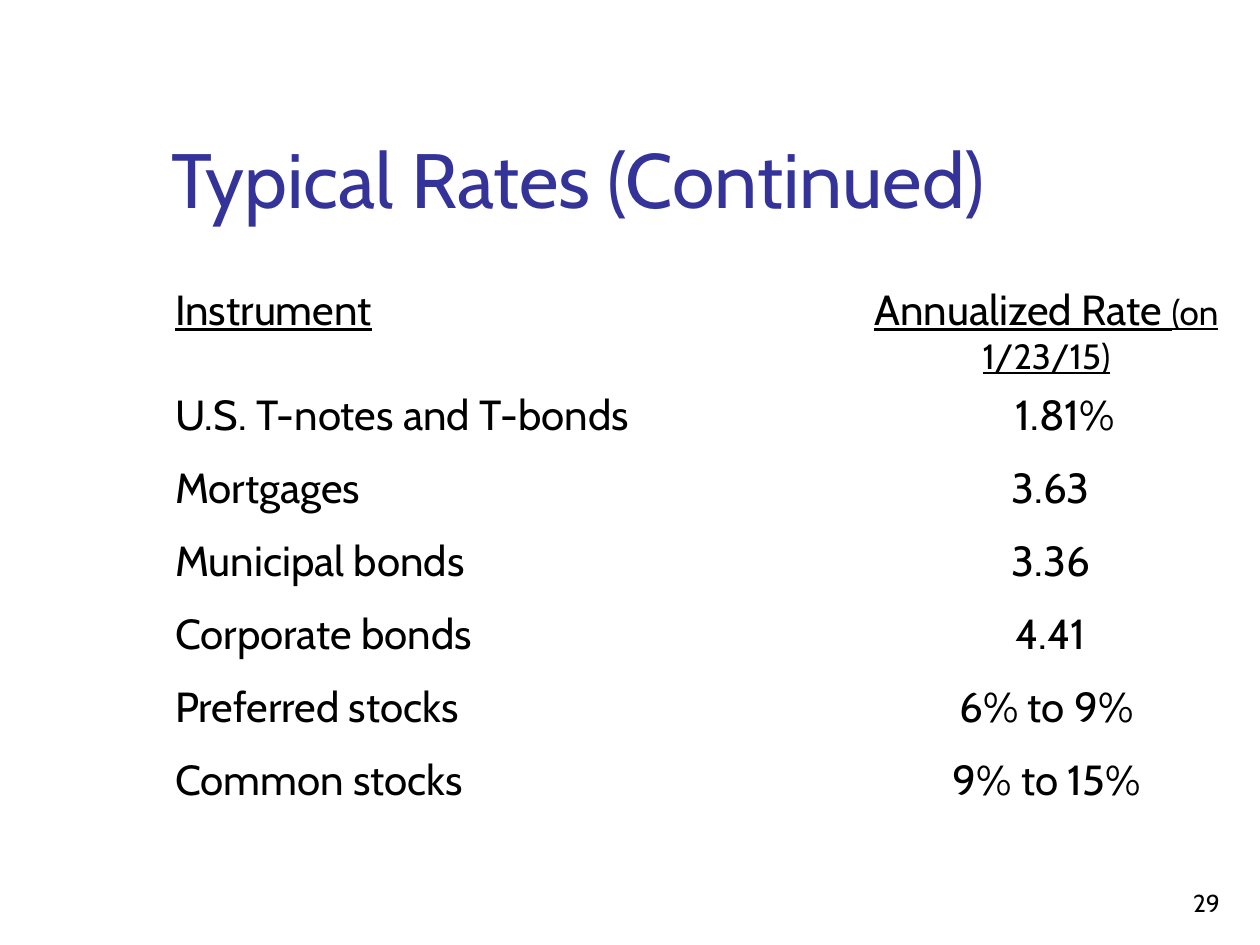
from pptx import Presentation
from pptx.dml.color import RGBColor
from pptx.enum.text import MSO_ANCHOR, MSO_AUTO_SIZE, PP_ALIGN
from pptx.util import Inches, Pt

COLORS = {"title": "333399", "text": "000000"}

# instrument, rate, extra left margin of the rate in inches
RATES = [
    ("U.S. T-notes and T-bonds", "1.81%", 0.3),
    ("Mortgages", "3.63", 0.07),
    ("Municipal bonds", "3.36", 0.07),
    ("Corporate bonds", "4.41", 0.07),
    ("Preferred stocks", "6% to 9%", 0),
    ("Common stocks", "9% to 15%", 0),
]


class Deck:
    face = "Cabin"

    def __init__(self):
        self.prs = Presentation()
        self.prs.slide_width = Inches(10)
        self.prs.slide_height = Inches(7.5)
        self.slide = self.prs.slides.add_slide(self.prs.slide_layouts[5])

    def style(self, font, size, color="text"):
        font.name = self.face
        font.size = Pt(size)
        font.color.rgb = RGBColor.from_string(COLORS[color])

    def label(self, frame, text, size, color="text", align=PP_ALIGN.LEFT):
        """Set one paragraph of text, all in one style."""
        frame.text = text
        line = frame.paragraphs[0]
        line.alignment = align
        self.style(line.font, size, color)

    def title(self, text, left, top, width, height):
        shape = self.slide.shapes.title
        shape.left, shape.top = Inches(left), Inches(top)
        shape.width, shape.height = Inches(width), Inches(height)
        frame = shape.text_frame
        frame.auto_size = MSO_AUTO_SIZE.NONE
        frame.vertical_anchor = MSO_ANCHOR.BOTTOM
        self.label(frame, text, 44, "title")

    def number(self, text, left, top, width, height):
        box = self.slide.shapes.add_textbox(
            Inches(left), Inches(top), Inches(width), Inches(height))
        frame = box.text_frame
        frame.word_wrap = True
        frame.vertical_anchor = MSO_ANCHOR.BOTTOM
        self.label(frame, text, 14, align=PP_ALIGN.RIGHT)

    def table(self, rows, left, top, widths, heights):
        """Add a plain table with the second column centred."""
        table = self.slide.shapes.add_table(
            len(rows), len(widths), Inches(left), Inches(top),
            Inches(sum(widths)), Inches(sum(heights))).table
        table.first_row = table.horz_banding = False
        for col, width in zip(table.columns, widths):
            col.width = Inches(width)
        for row, height, (name, rate, shift) in zip(table.rows, heights, rows):
            row.height = Inches(height)
            left_cell, right_cell = row.cells
            for cell in row.cells:
                cell.fill.background()
            self.label(left_cell.text_frame, name, 24)
            self.label(right_cell.text_frame, rate, 24, align=PP_ALIGN.CENTER)
            right_cell.margin_left = Inches(0.1 + shift)
        return table


def main():
    deck = Deck()
    deck.number("29", 7.7, 6.83, 2.08, 0.5)
    deck.title("Typical Rates (Continued)", 1.26, 0.23, 8.52, 1.6)
    head = ("Instrument", "Annualized Rate ", 0)
    heights = [0.63] + [0.58] * len(RATES)
    table = deck.table([head] + RATES, 1.29, 2.21, [5.53, 2.97], heights)

    date = table.cell(0, 1).text_frame.paragraphs[0].add_run()
    date.text = "(on 1/23/15)"
    date.font.size = Pt(20)
    for cell in table.rows[0].cells:
        cell.text_frame.paragraphs[0].font.underline = True

    deck.prs.save("out.pptx")


if __name__ == "__main__":
    main()
